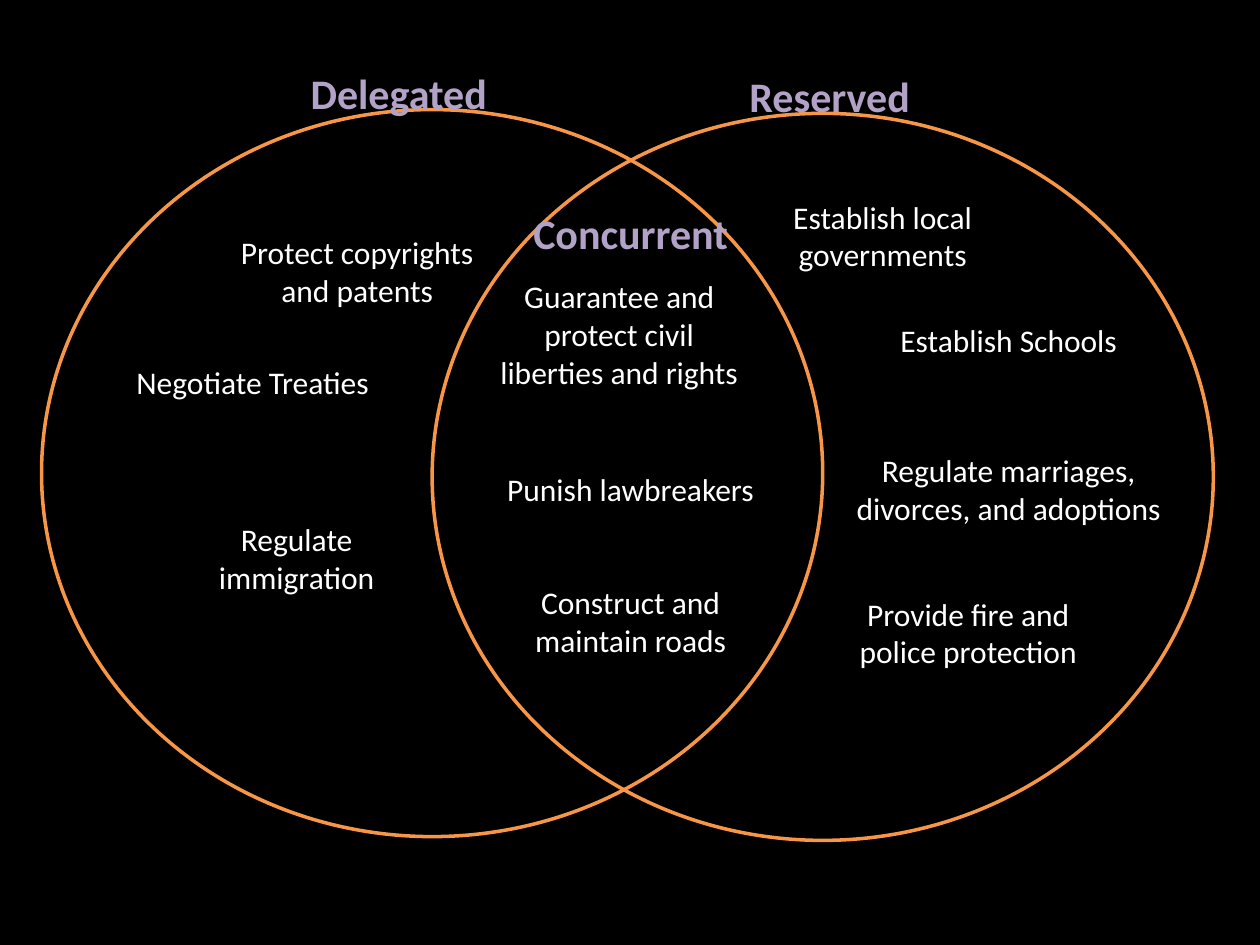
from pptx import Presentation
from pptx.dml.color import RGBColor
from pptx.enum.shapes import MSO_SHAPE
from pptx.enum.text import MSO_AUTO_SIZE, PP_ALIGN
from pptx.util import Inches, Pt


def color(hex_value):
    return RGBColor.from_string(hex_value)


def add_label(text, left, top, width, height, size, hex_value, bold):
    label = slide.shapes.add_textbox(
        Inches(left), Inches(top), Inches(width), Inches(height))
    frame = label.text_frame
    frame.word_wrap = True
    frame.auto_size = MSO_AUTO_SIZE.SHAPE_TO_FIT_TEXT
    frame.text = text
    paragraph = frame.paragraphs[0]
    paragraph.alignment = PP_ALIGN.CENTER
    font = paragraph.runs[0].font
    font.name = "Calibri"
    font.size = Pt(size)
    font.bold = bold
    font.color.rgb = color(hex_value)


presentation = Presentation()
presentation.slide_width = Inches(10)
presentation.slide_height = Inches(7.5)
slide = presentation.slides.add_slide(presentation.slide_layouts[6])
slide.background.fill.solid()
slide.background.fill.fore_color.rgb = color("000000")

# Overlapping circles: reserved behind, delegated in front
for left, top in [(3.43, 0.9), (0.33, 0.87)]:
    circle = slide.shapes.add_shape(
        MSO_SHAPE.OVAL, Inches(left), Inches(top), Inches(6.2), Inches(5.77))
    circle.shadow.inherit = False
    circle.fill.background()
    circle.line.color.rgb = color("F79646")
    circle.line.width = Pt(2)

# Headings of the three regions
headings = [
    ("Delegated", 2.08, 0.49),
    ("Reserved", 5.5, 0.51),
    ("Concurrent", 3.92, 1.6),
]
for text, left, top in headings:
    add_label(text, left, top, 2.17, 0.5, 24, "B3A2C7", True)

# Powers: text, left, top, width, number of lines
powers = [
    # Delegated
    ("Negotiate Treaties", 0.92, 2.83, 2.17, 1),
    ("Protect copyrights and patents", 1.75, 1.8, 2.17, 2),
    ("Regulate immigration", 1.27, 4.08, 2.17, 2),
    # Reserved
    ("Establish local governments", 5.92, 1.52, 2.17, 2),
    ("Establish Schools", 6.92, 2.5, 2.17, 1),
    ("Regulate marriages, divorces, and adoptions", 6.42, 3.53, 3.17, 2),
    ("Provide fire and police protection", 6.6, 4.67, 2.17, 2),
    # Concurrent
    ("Guarantee and protect civil liberties and rights", 3.83, 2.15, 2.17, 3),
    ("Punish lawbreakers", 3.92, 3.68, 2.17, 1),
    ("Construct and maintain roads", 3.92, 4.58, 2.17, 2),
]
for text, left, top, width, lines in powers:
    add_label(text, left, top, width, 0.1 + 0.3 * lines, 18, "FFFFFF", False)

presentation.save("out.pptx")
